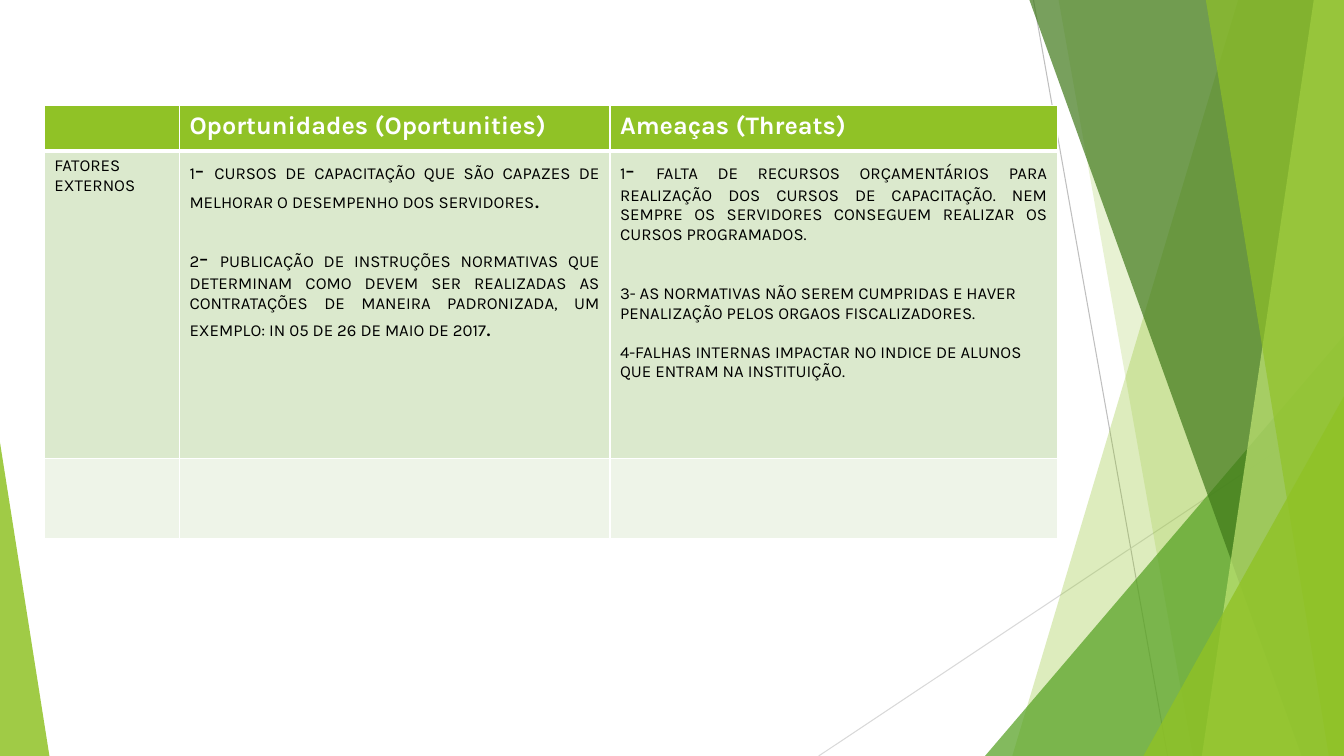
from dataclasses import dataclass
from pptx import Presentation
from pptx.dml.color import RGBColor as Rgb
from pptx.enum.shapes import MSO_CONNECTOR as Link, MSO_SHAPE as Form
from pptx.enum.text import PP_ALIGN as Align
from pptx.oxml.ns import qn
from pptx.util import Inches, Pt
from lxml.etree import SubElement as Sub

WIDE, HIGH = 13.33, 7.5
FONT = "Karla"
LIME = "90C226"


@dataclass
class Ray:
    start: tuple[float, float]
    end: tuple[float, float]
    color: str


@dataclass
class Band:
    top: float
    foot: float
    color: str
    alpha: int


@dataclass
class Peak:
    left: float
    top: float
    width: float
    apex: float
    color: str
    alpha: int


@dataclass
class Para:
    runs: list[tuple[str, int]]
    just: bool = False
    gap: int = 0


RAYS = [
    Ray((10.25, 0), (11.58, HIGH), "BFBFBF"),
    Ray((WIDE, 4.03), (8.12, HIGH), "D9D9D9"),
]
DECOR = [
    Band(12.28, 10.04, LIME, 30),
    Band(10.5, 11.83, LIME, 20),
    Peak(9.77, 3.33, 3.56, 1, "54A021", 72),
    Band(10.21, 12.91, "3F7819", 70),
    Band(13.03, 11.92, "C0E474", 70),
    Band(11.96, 13.18, LIME, 65),
    Peak(11.34, 3.93, 1.99, 1, LIME, 80),
    Peak(0, 4.39, 0.49, 0, LIME, 85),
]
COLS = [1.34, 4.27, 4.44]
ROWS = [0.45, 3.05, 0.79]
FILLS = [LIME, "DBE9CD", "EEF4E8"]
CELLS = [
    [
        [],
        [Para([("Oportunidades (Oportunities)", 18)])],
        [Para([("Ameaças (Threats)", 18)])],
    ],
    [
        [Para([("FATORES EXTERNOS", 12)])],
        [
            Para([
                ("1", 12), ("- ", 18),
                ("CURSOS DE CAPACITAÇÃO QUE SÃO CAPAZES DE MELHORAR O "
                 "DESEMPENHO DOS SERVIDORES", 12),
                (". ", 18),
            ], just=True),
            Para([
                ("2", 12), ("- ", 18),
                ("PUBLICAÇÃO DE INSTRUÇÕES NORMATIVAS QUE DETERMINAM COMO "
                 "DEVEM SER REALIZADAS AS CONTRATAÇÕES DE MANEIRA "
                 "PADRONIZADA, UM EXEMPLO: IN 05 DE 26 DE MAIO DE 2017", 12),
                (".", 18),
            ], just=True, gap=21),
        ],
        [
            Para([
                ("1", 12), ("- ", 18),
                ("FALTA DE RECURSOS ORÇAMENTÁRIOS PARA REALIZAÇÃO DOS "
                 "CURSOS DE CAPACITAÇÃO. NEM SEMPRE OS SERVIDORES "
                 "CONSEGUEM REALIZAR OS CURSOS PROGRAMADOS.", 12),
            ], just=True),
            Para([("3- AS NORMATIVAS NÃO SEREM CUMPRIDAS E HAVER "
                   "PENALIZAÇÃO PELOS ORGAOS FISCALIZADORES.", 12)], gap=28),
            Para([("4-FALHAS INTERNAS IMPACTAR NO INDICE DE ALUNOS QUE "
                   "ENTRAM NA INSTITUIÇÃO.", 12)], gap=14),
        ],
    ],
    [[], [], []],
]


def paint(fill, color: str, alpha: int = 100) -> None:
    fill.solid()
    fill.fore_color.rgb = Rgb.from_string(color)
    if alpha < 100:
        tint = fill._xPr.find(qn("a:solidFill"))[0]
        Sub(tint, qn("a:alpha"), val=str(alpha * 1000))


def add_ray(slide, ray: Ray) -> None:
    ends = [Inches(n) for n in ray.start + ray.end]
    line = slide.shapes.add_connector(Link.STRAIGHT, *ends)
    line.line.width = Pt(0.75)
    paint(line.line.fill, ray.color)
    Sub(line._element.spPr, qn("a:effectLst"))


def add_decor(slide, item: Band | Peak) -> None:
    if isinstance(item, Band):
        spots = [(item.top, 0), (WIDE, 0), (WIDE, HIGH), (item.foot, HIGH)]
        spots = [(Inches(x), Inches(y)) for x, y in spots]
        pen = slide.shapes.build_freeform(*spots[0])
        pen.add_line_segments(spots[1:], close=True)
        shape = pen.convert_to_shape()
    else:
        box = (item.left, item.top, item.width, HIGH - item.top)
        shape = slide.shapes.add_shape(
            Form.ISOSCELES_TRIANGLE, *[Inches(n) for n in box])
        shape.adjustments[0] = item.apex
    shape.shadow.inherit = False
    shape.line.fill.background()
    paint(shape.fill, item.color, item.alpha)


def add_edge(cell, side: str, width: float) -> None:
    edge = Sub(cell._tc.get_or_add_tcPr(), qn("a:ln" + side),
               w=str(Pt(width)))
    Sub(Sub(edge, qn("a:solidFill")), qn("a:srgbClr"), val="FFFFFF")


def fill_cell(cell, paras: list[Para], row: int) -> None:
    for side in "LRTB":
        thick = (row, side) in [(0, "B"), (1, "T")]
        add_edge(cell, side, 3 if thick else 1)
    paint(cell.fill, FILLS[row])
    frame = cell.text_frame
    for i, item in enumerate(paras):
        para = frame.add_paragraph() if i else frame.paragraphs[0]
        para.alignment = Align.JUSTIFY if item.just else Align.LEFT
        para.space_before = Pt(item.gap)
        for text, size in item.runs:
            run = para.add_run()
            run.text = text
            run.font.name = FONT
            run.font.size = Pt(size)
            run.font.bold = row == 0
            paint(run.font.fill, "000000" if row else "FFFFFF")


def add_grid(slide) -> None:
    box = (0.44, 1.05, sum(COLS), sum(ROWS))
    table = slide.shapes.add_table(
        len(ROWS), len(COLS), *[Inches(n) for n in box]).table
    for col, width in zip(table.columns, COLS):
        col.width = Inches(width)
    for r, height in enumerate(ROWS):
        table.rows[r].height = Inches(height)
        for c, paras in enumerate(CELLS[r]):
            fill_cell(table.cell(r, c), paras, r)


def main() -> None:
    deck = Presentation()
    deck.slide_width, deck.slide_height = Inches(WIDE), Inches(HIGH)
    slide = deck.slides.add_slide(deck.slide_layouts[6])
    paint(slide.background.fill, "FFFFFF")
    for ray in RAYS:
        add_ray(slide, ray)
    for item in DECOR:
        add_decor(slide, item)
    add_grid(slide)
    deck.save("out.pptx")


if __name__ == "__main__":
    main()
